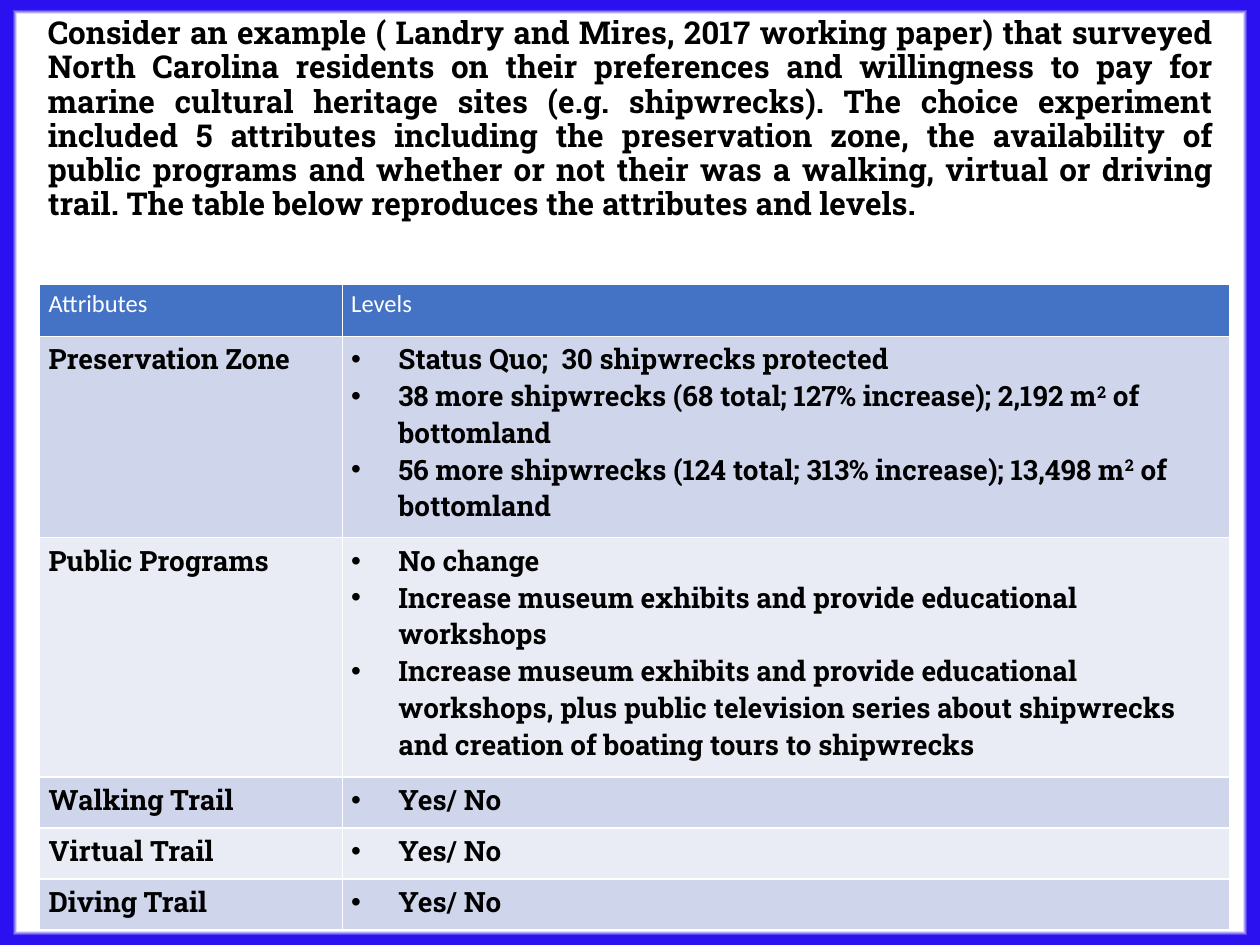
from lxml import etree
from pptx import Presentation
from pptx.dml.color import RGBColor
from pptx.enum.text import MSO_ANCHOR, MSO_AUTO_SIZE, PP_ALIGN
from pptx.oxml import parse_xml
from pptx.oxml.ns import nsdecls, qn
from pptx.util import Cm, Pt

TOP = MSO_ANCHOR.TOP
FIXED = MSO_AUTO_SIZE.NONE
JUSTIFY = PP_ALIGN.JUSTIFY
SLAB = "Roboto Slab"
HEADER_FILL = "4472C4"
BAND_FILLS = ["CFD5EA", "E9EBF5"]


def hue(code):
    return RGBColor.from_string(code)


def write(para, text, size=16, font=SLAB, color="000000", bold=True, raised=False):
    span = para.add_run()
    span.text = text
    span.font.size = Pt(size)
    span.font.name = font
    span.font.bold = bold
    span.font.color.rgb = hue(color)
    if raised:
        span._r.get_or_add_rPr().set("baseline", "30000")


INTRO = (
    "Consider an example ( Landry and Mires, 2017 working paper) that surveyed "
    "North Carolina residents on their preferences and willingness to pay for "
    "marine cultural heritage sites (e.g. shipwrecks). The choice experiment "
    "included 5 attributes including the preservation zone, the availability of "
    "public programs and whether or not their was a walking, virtual or driving "
    "trail. The table below reproduces the attributes and levels."
)
EXHIBITS = "Increase museum exhibits and provide educational workshops"
ATTRIBUTES = [
    ("Preservation Zone", 4.06, [
        "Status Quo;  30 shipwrecks protected",
        "38 more shipwrecks (68 total; 127% increase); 2,192 m^2^ of bottomland",
        "56 more shipwrecks (124 total; 313% increase); 13,498 m^2^ of bottomland",
    ]),
    ("Public Programs", 4.82, [
        "No change",
        EXHIBITS,
        EXHIBITS + ", plus public television series about shipwrecks "
        "and creation of boating tours to shipwrecks",
    ]),
    ("Walking Trail", 1.03, ["Yes/ No"]),
    ("Virtual Trail", 1.03, ["Yes/ No"]),
    ("Diving Trail", 1.03, ["Yes/ No"]),
]

deck = Presentation()
deck.slide_width = Cm(25.4)
deck.slide_height = Cm(19.05)
page = deck.slides.add_slide(deck.slide_layouts[5])

backdrop = page.background.fill
backdrop.gradient()
gradient = page.element.find(".//" + qn("a:gradFill"))
stops = "".join(
    f'<a:gs pos="{percent * 1000}"><a:srgbClr val="{code}"/></a:gs>'
    for percent, code in [(95, "FFFFFF"), (97, "FFFFFF"), (98, "2B11EF"), (100, "2B11EF")]
)
frame = parse_xml(
    f'<a:gradFill {nsdecls("a")} rotWithShape="1"><a:gsLst>{stops}</a:gsLst>'
    '<a:path path="shape"><a:fillToRect l="50000" t="50000" r="50000" b="50000"/></a:path>'
    "</a:gradFill>"
)
gradient.getparent().replace(gradient, frame)

box = page.shapes.title
box.left, box.top, box.width, box.height = Cm(0.71), Cm(0.23), Cm(24), Cm(5.64)
box.text_frame.word_wrap = True
box.text_frame.auto_size = FIXED
box.text_frame.vertical_anchor = TOP
para = box.text_frame.paragraphs[0]
para.alignment = JUSTIFY
para.line_spacing = 0.9
write(para, INTRO, size=18)

table = page.shapes.add_table(
    len(ATTRIBUTES) + 1, 2, Cm(0.8), Cm(5.73), Cm(24), Cm(13.02)
).table
table.columns[0].width = Cm(6.1)
table.columns[1].width = Cm(17.9)
table.rows[0].height = Cm(1.05)

for cell, heading in zip(table.rows[0].cells, ["Attributes", "Levels"]):
    write(cell.text_frame.paragraphs[0], heading,
          size=14, font="Calibri", color="FFFFFF", bold=False)

for number, (attribute, height, levels) in enumerate(ATTRIBUTES, start=1):
    table.rows[number].height = Cm(height)
    write(table.cell(number, 0).text_frame.paragraphs[0], attribute)
    body = table.cell(number, 1).text_frame
    for index, level in enumerate(levels):
        para = body.add_paragraph() if index else body.paragraphs[0]
        layout = para._p.get_or_add_pPr()
        layout.set("marL", str(Cm(0.95)))
        layout.set("indent", str(-Cm(0.95)))
        etree.SubElement(layout, qn("a:buFont")).set("typeface", "Arial")
        etree.SubElement(layout, qn("a:buChar")).set("char", "•")
        for part, text in enumerate(level.split("^")):
            write(para, text, raised=part % 2 == 1)

for number, row in enumerate(table.rows):
    for cell in row.cells:
        cell.margin_left = cell.margin_right = Cm(0.18)
        cell.margin_top = cell.margin_bottom = Cm(0.09)
        cell.fill.solid()
        cell.fill.fore_color.rgb = hue(BAND_FILLS[(number - 1) % 2] if number else HEADER_FILL)

deck.save("out.pptx")
